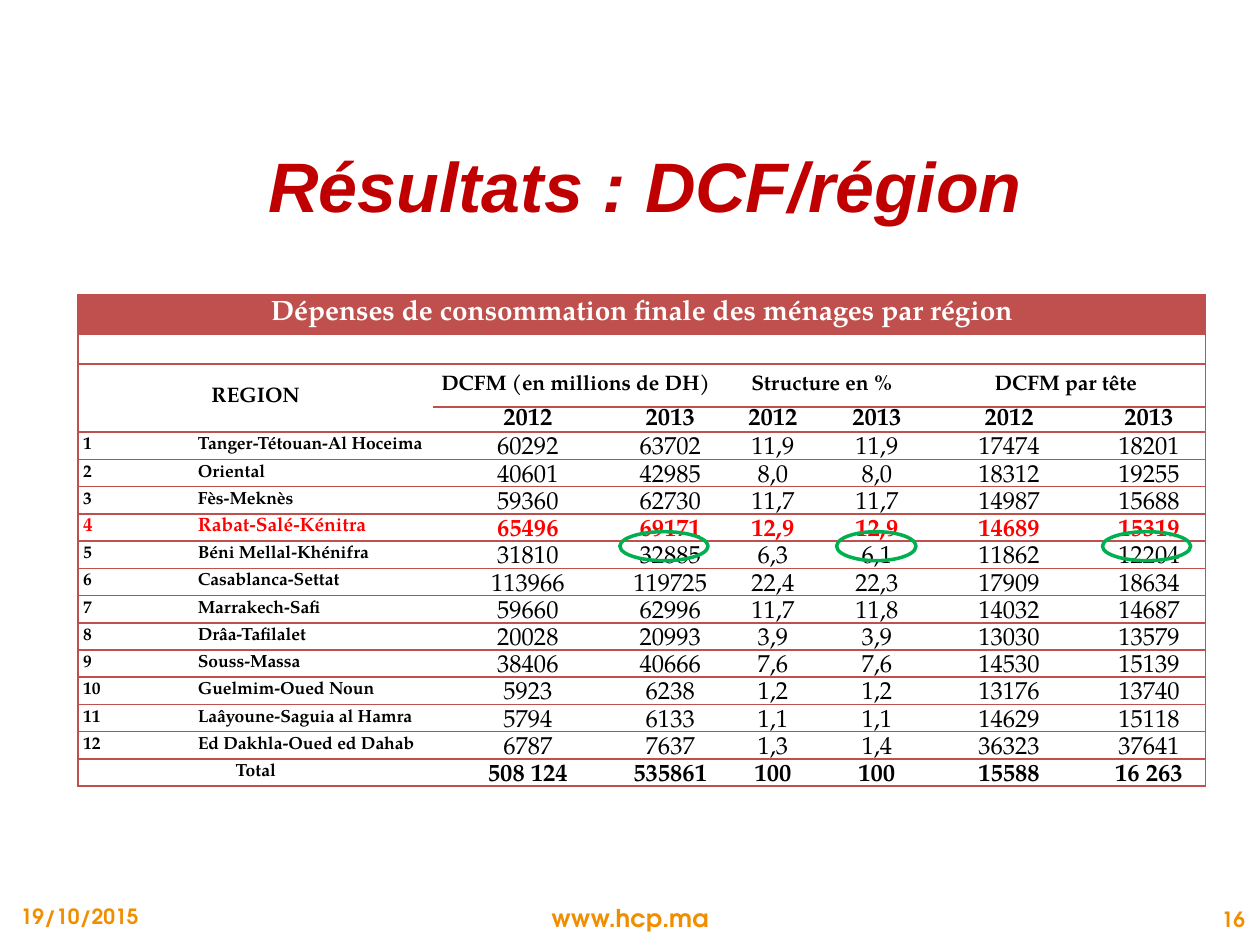
"""Build the slide on household consumption spending by region."""
import lxml.etree
import pptx
import pptx.dml.color
import pptx.enum.shapes
import pptx.enum.text
import pptx.oxml.ns
import pptx.util

Inches = pptx.util.Inches
ALIGN = pptx.enum.text.PP_ALIGN
ANCHOR = pptx.enum.text.MSO_ANCHOR

SERIF, ROUND = "TeX Gyre Pagella", "TeX Gyre Adventor"
RED, BLACK, GREEN, ORANGE = "C0504D", "000000", "00B050", "F18E00"

COLUMN_WIDTHS = [0.91, 1.91, 1.25, 0.25, 0.76, 0.87, 0.78, 1.02, 0.3, 0.9]
ROW_HEIGHTS = [0.31, 0.24, 0.34, 0.2] + [2.81 / 13] * 13
VALUE_COLUMNS = [2, 4, 5, 6, 7, 9]
HIGHLIGHTED = "Rabat-Salé-Kénitra"
REGIONS = [
    ("Tanger-Tétouan-Al Hoceima", "60292", "63702", "11,9", "11,9", "17474", "18201"),
    ("Oriental", "40601", "42985", "8,0", "8,0", "18312", "19255"),
    ("Fès-Meknès", "59360", "62730", "11,7", "11,7", "14987", "15688"),
    ("Rabat-Salé-Kénitra", "65496", "69171", "12,9", "12,9", "14689", "15319"),
    ("Béni Mellal-Khénifra", "31810", "32885", "6,3", "6,1", "11862", "12204"),
    ("Casablanca-Settat", "113966", "119725", "22,4", "22,3", "17909", "18634"),
    ("Marrakech-Safi", "59660", "62996", "11,7", "11,8", "14032", "14687"),
    ("Drâa-Tafilalet", "20028", "20993", "3,9", "3,9", "13030", "13579"),
    ("Souss-Massa", "38406", "40666", "7,6", "7,6", "14530", "15139"),
    ("Guelmim-Oued Noun", "5923", "6238", "1,2", "1,2", "13176", "13740"),
    ("Laâyoune-Saguia al Hamra", "5794", "6133", "1,1", "1,1", "14629", "15118"),
    ("Ed Dakhla-Oued ed Dahab", "6787", "7637", "1,3", "1,4", "36323", "37641"),
]
TOTALS = ("508 124", "535861", "100", "100", "15588", "16 263")


def rgb(color):
    """Turn a hex string into a colour."""
    return pptx.dml.color.RGBColor.from_string(color)


def write(frame, text, color, align=ALIGN.CENTER, **formats):
    """Write one formatted line into a text frame."""
    paragraph = frame.paragraphs[0]
    paragraph.alignment = align
    run = paragraph.add_run()
    run.text = text
    formats["size"] = pptx.util.Pt(formats["size"])
    for name, value in formats.items():
        setattr(run.font, name, value)
    run.font.color.rgb = rgb(color)


def add_label(slide, box, text, color, anchor=ANCHOR.MIDDLE, wrap=True, **formats):
    """Add a bold text box."""
    frame = slide.shapes.add_textbox(*map(Inches, box)).text_frame
    frame.word_wrap = wrap
    frame.vertical_anchor = anchor
    write(frame, text, color, bold=True, **formats)


def add_ring(slide, left, width):
    """Circle one value of the lowest-spending region."""
    ring = slide.shapes.add_shape(pptx.enum.shapes.MSO_SHAPE.OVAL, Inches(left),
                                  Inches(4.22), Inches(width), Inches(0.23))
    ring.shadow.inherit = False
    ring.fill.background()
    ring.line.color.rgb = rgb(GREEN)
    ring.line.width = pptx.util.Pt(2)


def draw_borders(cell, sides):
    """Draw the named sides of a cell in red and clear the others."""
    qn = pptx.oxml.ns.qn
    properties = cell._tc.get_or_add_tcPr()
    for side in "LRTB":
        line = lxml.etree.SubElement(properties, qn(f"a:ln{side}"), w="12700")
        if side in sides:
            fill = lxml.etree.SubElement(line, qn("a:solidFill"))
            lxml.etree.SubElement(fill, qn("a:srgbClr"), val=RED)
        else:
            lxml.etree.SubElement(line, qn("a:noFill"))


def style_cell(cell, row, column):
    """Set the margins, borders, fill and empty-line size of a cell."""
    margins = {"margin_left": 0.04, "margin_right": 0.04, "margin_top": 0, "margin_bottom": 0}
    for name, value in margins.items():
        setattr(cell, name, Inches(value))
    span = cell.span_width if cell.is_merge_origin else 1
    at_right = column + span == len(COLUMN_WIDTHS)
    draw_borders(cell, "TB" + "L" * (column == 0) + "R" * at_right)
    if row == 0:
        cell.fill.solid()
        cell.fill.fore_color.rgb = rgb(RED)
    else:
        cell.fill.background()
    if row == 1:
        lxml.etree.SubElement(cell.text_frame.paragraphs[0]._p,
                              pptx.oxml.ns.qn("a:endParaRPr"), sz="1000")


def fill_cell(cell, text, size, color=BLACK, align=ALIGN.CENTER, bold=True,
              anchor=ANCHOR.MIDDLE):
    """Write the text of a table cell."""
    cell.vertical_anchor = anchor
    write(cell.text_frame, text, color, align, size=size, bold=bold, name=SERIF)


def fill_values(table, row, values, color=BLACK, bold=True, anchor=ANCHOR.BOTTOM,
                spacing=0.9):
    """Write the six values of a table row with tight lines."""
    for column, value in zip(VALUE_COLUMNS, values):
        cell = table.cell(row, column)
        fill_cell(cell, value, 14, color, bold=bold, anchor=anchor)
        cell.text_frame.paragraphs[0].line_spacing = spacing


def add_spending_table(slide):
    """Add the table of spending by region."""
    table = slide.shapes.add_table(
        len(ROW_HEIGHTS), len(COLUMN_WIDTHS), Inches(0.62), Inches(2.34),
        Inches(sum(COLUMN_WIDTHS)), Inches(sum(ROW_HEIGHTS))).table
    table.first_row = table.horz_banding = False

    total_row = len(ROW_HEIGHTS) - 1
    merges = [(0, 0, 0, 9), (1, 3, 1, 4), (1, 8, 1, 9), (2, 0, 3, 1), (2, 2, 2, 4),
              (2, 5, 2, 6), (2, 7, 2, 9), (total_row, 0, total_row, 1)]
    for row in range(3, total_row + 1):
        merges += [(row, 2, row, 3), (row, 7, row, 8)]
    for top, left, bottom, right in merges:
        table.cell(top, left).merge(table.cell(bottom, right))

    for column, width in zip(table.columns, COLUMN_WIDTHS):
        column.width = Inches(width)
    for row, height in enumerate(ROW_HEIGHTS):
        table.rows[row].height = Inches(height)
        for column in range(len(COLUMN_WIDTHS)):
            style_cell(table.cell(row, column), row, column)

    fill_cell(table.cell(0, 0), "Dépenses de consommation finale des ménages par région",
              16, "FFFFFF")
    headings = {0: "REGION", 2: "DCFM (en millions de DH)", 5: "Structure en %",
                7: "DCFM par tête"}
    for column, heading in headings.items():
        fill_cell(table.cell(2, column), heading, 12)
    fill_values(table, 3, ("2012", "2013") * 3, anchor=ANCHOR.MIDDLE, spacing=0.84)
    for number, (region, *values) in enumerate(REGIONS, 1):
        row = number + 3
        marked = region == HIGHLIGHTED
        color, size = ("FF0000", 11) if marked else (BLACK, 10)
        for column, label in enumerate((str(number), region)):
            fill_cell(table.cell(row, column), label, size, color, ALIGN.LEFT)
        fill_values(table, row, values, color, marked)
    fill_cell(table.cell(total_row, 0), "Total", 10)
    fill_values(table, total_row, TOTALS)


def main():
    """Build and save the presentation."""
    deck = pptx.Presentation()
    deck.slide_width, deck.slide_height = Inches(10), Inches(7.5)
    slide = deck.slides.add_slide(deck.slide_layouts[6])
    add_label(slide, (3.82, 7.12, 2.36, 0.33), "www.hcp.ma", ORANGE, ANCHOR.TOP,
              size=14, name=ROUND)
    add_label(slide, (1.3, 0.84, 7.64, 1.25), "Résultats : DCF/région", "C00000",
              size=40, name="Arial", italic=True)
    add_label(slide, (0, 7.12, 1.2, 0.3), "19/10/2015", ORANGE, wrap=False,
              align=ALIGN.RIGHT, size=12, name=ROUND)
    add_label(slide, (8.46, 7.12, 1.52, 0.35), "16", ORANGE,
              align=ALIGN.RIGHT, size=12, name=ROUND)
    add_spending_table(slide)
    for left, width in ((4.92, 0.7), (6.64, 0.63), (8.75, 0.7)):
        add_ring(slide, left, width)
    deck.save("out.pptx")


if __name__ == "__main__":
    main()
